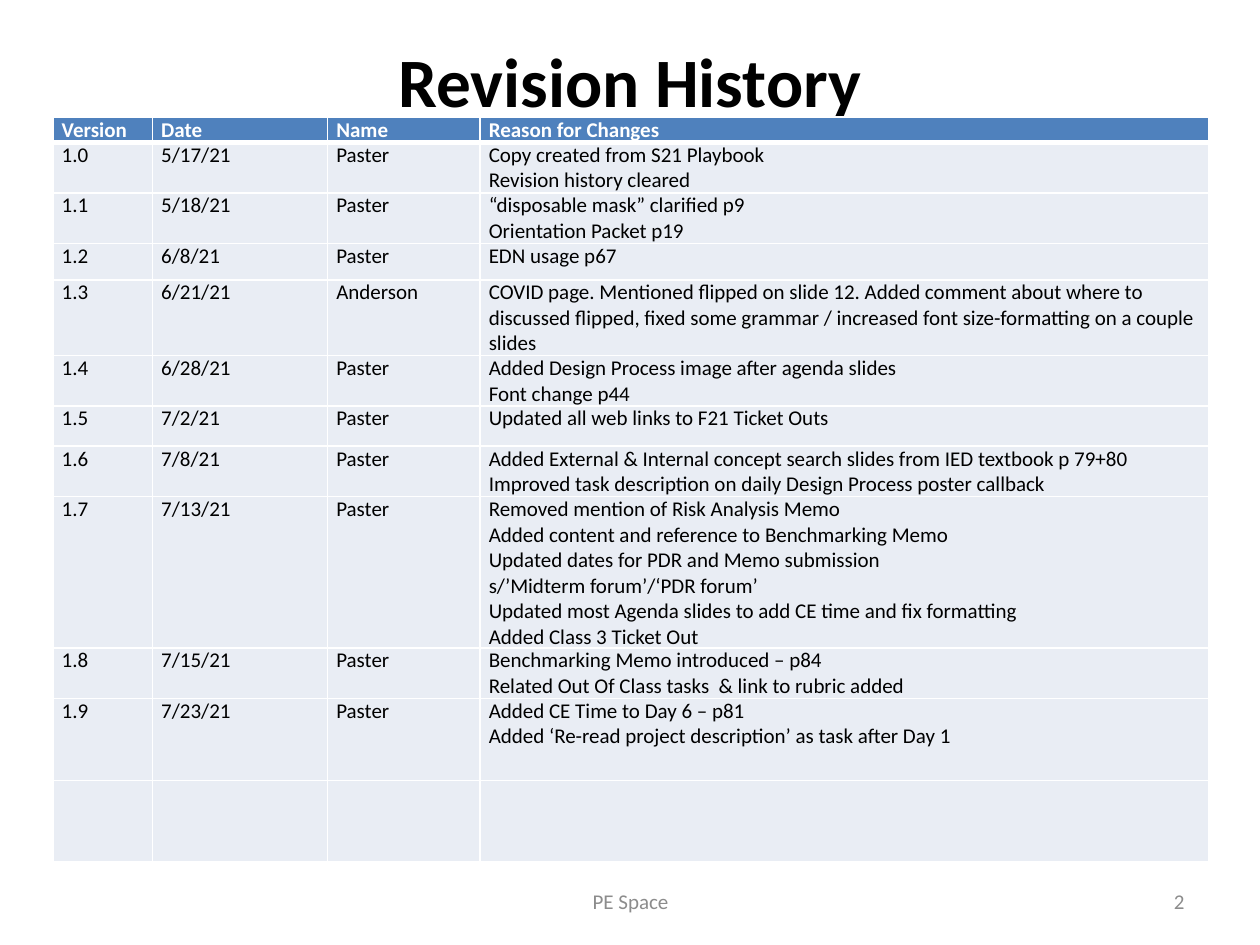
from lxml import etree
from pptx import Presentation
from pptx.dml.color import RGBColor
from pptx.enum.text import MSO_ANCHOR as ANCHOR, PP_ALIGN as ALIGN
from pptx.oxml.ns import qn
from pptx.util import Inches, Pt

BLACK = RGBColor(0x00, 0x00, 0x00)
WHITE = RGBColor(0xFF, 0xFF, 0xFF)
GREY = RGBColor(0x8C, 0x8C, 0x8C)
HEADER_BLUE = RGBColor(0x4F, 0x81, 0xBD)
ROW_BLUE = RGBColor(0xE9, 0xED, 0xF4)

COL_WIDTHS = [0.79, 1.39, 1.21, 5.78]
# Minimum row height, version, date, name, reasons
ROWS = [
    (0.15, "Version", "Date", "Name", ["Reason for Changes"]),
    (0.29, "1.0", "5/17/21", "Paster",
     ["Copy created from S21 Playbook", "Revision history cleared"]),
    (0.15, "1.1", "5/18/21", "Paster",
     ["“disposable mask” clarified p9", "Orientation Packet p19"]),
    (0.29, "1.2", "6/8/21", "Paster", ["EDN usage p67"]),
    (0.32, "1.3", "6/21/21", "Anderson",
     ["COVID page. Mentioned flipped on slide 12. Added comment about where to "
      "discussed flipped, fixed some grammar / increased font size-formatting "
      "on a couple slides"]),
    (0.1, "1.4", "6/28/21", "Paster",
     ["Added Design Process image after agenda slides", "Font change p44"]),
    (0.32, "1.5", "7/2/21", "Paster", ["Updated all web links to F21 Ticket Outs"]),
    (0.32, "1.6", "7/8/21", "Paster",
     ["Added External & Internal concept search slides from IED textbook p 79+80",
      "Improved task description on daily Design Process poster callback"]),
    (0.3, "1.7", "7/13/21", "Paster",
     ["Removed mention of Risk Analysis Memo",
      "Added content and reference to Benchmarking Memo",
      "Updated dates for PDR and Memo submission",
      "s/’Midterm forum’/‘PDR forum’",
      "Updated most Agenda slides to add CE time and fix formatting",
      "Added Class 3 Ticket Out"]),
    (0.36, "1.8", "7/15/21", "Paster",
     ["Benchmarking Memo introduced – p84",
      "Related Out Of Class tasks  & link to rubric added"]),
    (0.65, "1.9", "7/23/21", "Paster",
     ["Added CE Time to Day 6 – p81",
      "Added ‘Re-read project description’ as task after Day 1"]),
    (0.65, "", "", "", []),
]


def write_text(tf, lines, size=12, color=BLACK, bold=False, align=ALIGN.LEFT):
    """Fill a text frame with one paragraph per line."""
    for i, line in enumerate(lines):
        p = tf.add_paragraph() if i else tf.paragraphs[0]
        p.alignment = align
        r = p.add_run()
        r.text = line
        r.font.name = "Calibri"
        r.font.size = Pt(size)
        r.font.bold = bold
        r.font.color.rgb = color


def set_borders(cell, top, bottom):
    """Draw white cell borders; top and bottom are widths in points."""
    tc_pr = cell._tc.get_or_add_tcPr()
    for side, width in (("L", 1), ("R", 1), ("T", top), ("B", bottom)):
        ln = etree.SubElement(tc_pr, qn(f"a:ln{side}"), w=str(Pt(width)))
        fill = etree.SubElement(ln, qn("a:solidFill"))
        etree.SubElement(fill, qn("a:srgbClr"), val=str(WHITE))


prs = Presentation()
prs.slide_width, prs.slide_height = Inches(10), Inches(7.5)
s = prs.slides.add_slide(prs.slide_layouts[6])

# Title and footer
title_format = dict(size=39.6, bold=True, align=ALIGN.CENTER)
footer_format = dict(size=12, color=GREY)
for text, box, anchor, text_format in (
    ("Revision History", (0.5, 0.3, 9, 1.25), ANCHOR.TOP, title_format),
    ("PE Space", (3.42, 6.95, 3.17, 0.4), ANCHOR.MIDDLE,
     dict(footer_format, align=ALIGN.CENTER)),
    ("2", (7.17, 6.95, 2.33, 0.4), ANCHOR.MIDDLE,
     dict(footer_format, align=ALIGN.RIGHT)),
):
    tf = s.shapes.add_textbox(*map(Inches, box)).text_frame
    tf.word_wrap = True
    tf.vertical_anchor = anchor
    tf.margin_top = tf.margin_bottom = 0
    write_text(tf, [text], **text_format)

# Revision table
table = s.shapes.add_table(
    len(ROWS), len(COL_WIDTHS), Inches(0.42), Inches(0.93),
    Inches(sum(COL_WIDTHS)), Inches(sum(row[0] for row in ROWS))).table
for column, width in zip(table.columns, COL_WIDTHS):
    column.width = Inches(width)

for i, (height, version, date, name, reasons) in enumerate(ROWS):
    table.rows[i].height = Inches(height)
    is_header = i == 0
    for j, lines in enumerate(([version], [date], [name], reasons)):
        cell = table.cell(i, j)
        cell.margin_left = cell.margin_right = Inches(0.07)
        cell.margin_top = cell.margin_bottom = 0
        set_borders(cell, top=3 if i == 1 else 1, bottom=3 if is_header else 1)
        cell.fill.solid()
        cell.fill.fore_color.rgb = HEADER_BLUE if is_header else ROW_BLUE
        if any(lines):
            write_text(cell.text_frame, lines, bold=is_header,
                       color=WHITE if is_header else BLACK)

prs.save("out.pptx")
